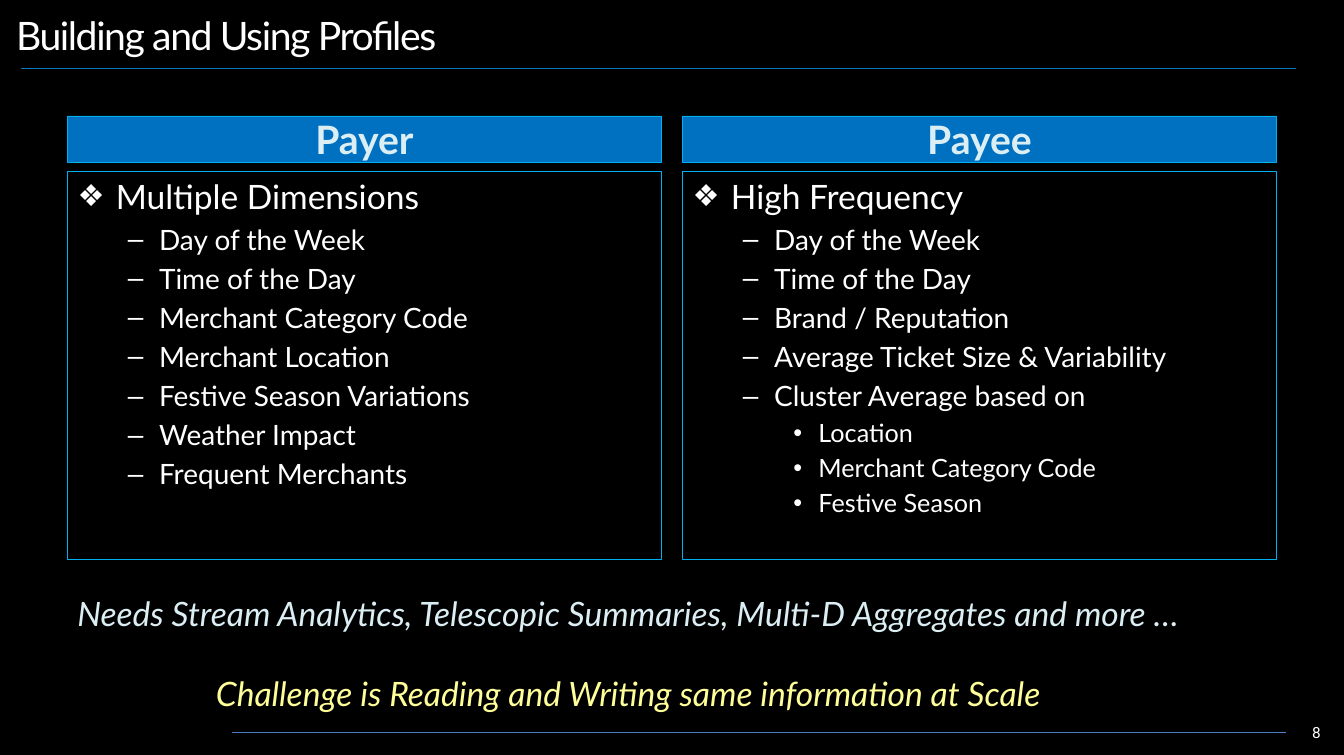
from lxml import etree
from pptx import Presentation
from pptx.dml.color import RGBColor
from pptx.enum.shapes import MSO_CONNECTOR
from pptx.enum.text import MSO_ANCHOR, MSO_AUTO_SIZE, PP_ALIGN
from pptx.oxml.ns import qn
from pptx.util import Inches, Pt

STRAIGHT = MSO_CONNECTOR.STRAIGHT
TOP, MIDDLE = MSO_ANCHOR.TOP, MSO_ANCHOR.MIDDLE
NO_FIT = MSO_AUTO_SIZE.NONE
LEFT, CENTER, RIGHT = PP_ALIGN.LEFT, PP_ALIGN.CENTER, PP_ALIGN.RIGHT

BLACK = RGBColor(0x00, 0x00, 0x00)
WHITE = RGBColor(0xFF, 0xFF, 0xFF)
PALE_BLUE = RGBColor(0xDB, 0xEE, 0xF4)
YELLOW = RGBColor(0xFF, 0xFF, 0x99)
HEADING_BLUE = RGBColor(0x00, 0x70, 0xC0)
BORDER_BLUE = RGBColor(0x00, 0xB0, 0xF0)
TITLE_RULE = RGBColor(0x07, 0x79, 0xBA)
FOOTER_RULE = RGBColor(0x4B, 0x7E, 0xBC)

# Per level: bullet, bullet size in %, left margin, hanging indent, text size
LEVELS = [
    ("❖", 90, 0.38, 0.38, 24),
    ("–", 100, 0.81, 0.31, 20),
    ("•", 100, 1.25, 0.25, 18),
]

PAYER = [(0, "Multiple Dimensions")] + [(1, text) for text in (
    "Day of the Week", "Time of the Day", "Merchant Category Code",
    "Merchant Location", "Festive Season Variations", "Weather Impact",
    "Frequent Merchants")]
PAYEE = [(0, "High Frequency")] + [(1, text) for text in (
    "Day of the Week", "Time of the Day", "Brand / Reputation",
    "Average Ticket Size & Variability", "Cluster Average based on")] + [
    (2, text) for text in (
        "Location", "Merchant Category Code", "Festive Season")]

COLUMN_LEFTS = (0.67, 6.78)
COLUMN_WIDTH = 5.9


def place(sp, left, top, width, height, anchor):
    sp.left, sp.top = Inches(left), Inches(top)
    sp.width, sp.height = Inches(width), Inches(height)
    tf = sp.text_frame
    tf.auto_size = NO_FIT
    tf.word_wrap = True
    tf.vertical_anchor = anchor
    return tf


def add_run(p, text, size, color, font="Lato", bold=False, italic=False):
    r = p.add_run()
    r.text = text
    r.font.name = font
    r.font.size = Pt(size)
    r.font.bold = bold
    r.font.italic = italic
    r.font.color.rgb = color
    return r


def next_paragraph(tf, index):
    return tf.add_paragraph() if index else tf.paragraphs[0]


def set_bullet(p, level):
    char, percent, margin, hanging, _ = LEVELS[level]
    p.level = level
    pPr = p._p.get_or_add_pPr()
    pPr.set("marL", str(Inches(margin)))
    pPr.set("indent", str(-Inches(hanging)))
    etree.SubElement(pPr, qn("a:buSzPct")).set("val", str(percent * 1000))
    etree.SubElement(pPr, qn("a:buFont")).set("typeface", "Arial")
    etree.SubElement(pPr, qn("a:buChar")).set("char", char)


def add_border(sp):
    sp.line.color.rgb = BORDER_BLUE
    sp.line.width = Pt(0.25)


def fill_title(s, text):
    tf = place(s.shapes.title, 0.06, 0.01, 12.91, 0.67, MIDDLE)
    p = tf.paragraphs[0]
    p.alignment = LEFT
    r = add_run(p, text, 28, WHITE)
    r._r.get_or_add_rPr().set("spc", "-100")


def fill_heading(sp, left, text):
    tf = place(sp, left, 1.15, COLUMN_WIDTH, 0.46, MIDDLE)
    sp.fill.solid()
    sp.fill.fore_color.rgb = HEADING_BLUE
    add_border(sp)
    p = tf.paragraphs[0]
    p.alignment = CENTER
    p.space_before = Pt(0)
    add_run(p, text, 28, PALE_BLUE, bold=True)


def fill_list(sp, left, items):
    tf = place(sp, left, 1.7, COLUMN_WIDTH, 3.86, TOP)
    add_border(sp)
    for i, (level, text) in enumerate(items):
        p = next_paragraph(tf, i)
        set_bullet(p, level)
        size = LEVELS[level][-1]
        p.space_before = Pt(0.2 * size if i else 0)
        add_run(p, text, size, WHITE)


def add_rule(s, left, right, y, color):
    line = s.shapes.add_connector(
        STRAIGHT, Inches(left), Inches(y), Inches(right), Inches(y))
    line.line.color.rgb = color
    line.line.width = Pt(0.75)
    etree.SubElement(line._element.spPr, qn("a:effectLst"))


def add_text_box(s, left, top, width, height, anchor):
    sp = s.shapes.add_textbox(0, 0, 0, 0)
    return place(sp, left, top, width, height, anchor)


def add_conclusions(s):
    tf = add_text_box(s, 0.67, 5.84, 11.13, 1.31, TOP)
    tf.word_wrap = False
    lines = (
        ("Needs Stream Analytics, Telescopic Summaries, "
         "Multi-D Aggregates and more …", PALE_BLUE, LEFT, 0),
        ("Challenge is Reading and Writing same information at Scale",
         YELLOW, CENTER, 28.8),
    )
    for i, (text, color, alignment, gap) in enumerate(lines):
        p = next_paragraph(tf, i)
        p.alignment = alignment
        p.space_before = Pt(gap)
        add_run(p, text, 24, color, italic=True)


def add_page_number(s, number):
    tf = add_text_box(s, 10.13, 7.07, 3.11, 0.41, MIDDLE)
    tf.margin_left = tf.margin_right = Inches(0.12)
    tf.margin_top = tf.margin_bottom = Inches(0.06)
    p = tf.paragraphs[0]
    p.alignment = RIGHT
    add_run(p, number, 11, WHITE, font="Roboto")


def main():
    prs = Presentation()
    prs.slide_width, prs.slide_height = Inches(13.35), Inches(7.5)
    s = prs.slides.add_slide(prs.slide_layouts.get_by_name("Comparison"))
    s.background.fill.solid()
    s.background.fill.fore_color.rgb = BLACK

    add_rule(s, 2.3, 12.77, 7.28, FOOTER_RULE)
    add_rule(s, 0.21, 12.87, 0.68, TITLE_RULE)
    fill_title(s, "Building and Using Profiles")

    columns = (("Payer", PAYER), ("Payee", PAYEE))
    for i, (left, (heading, items)) in enumerate(zip(COLUMN_LEFTS, columns)):
        fill_heading(s.placeholders[2 * i + 1], left, heading)
        fill_list(s.placeholders[2 * i + 2], left, items)

    add_conclusions(s)
    add_page_number(s, "8")
    prs.save("out.pptx")


if __name__ == "__main__":
    main()
